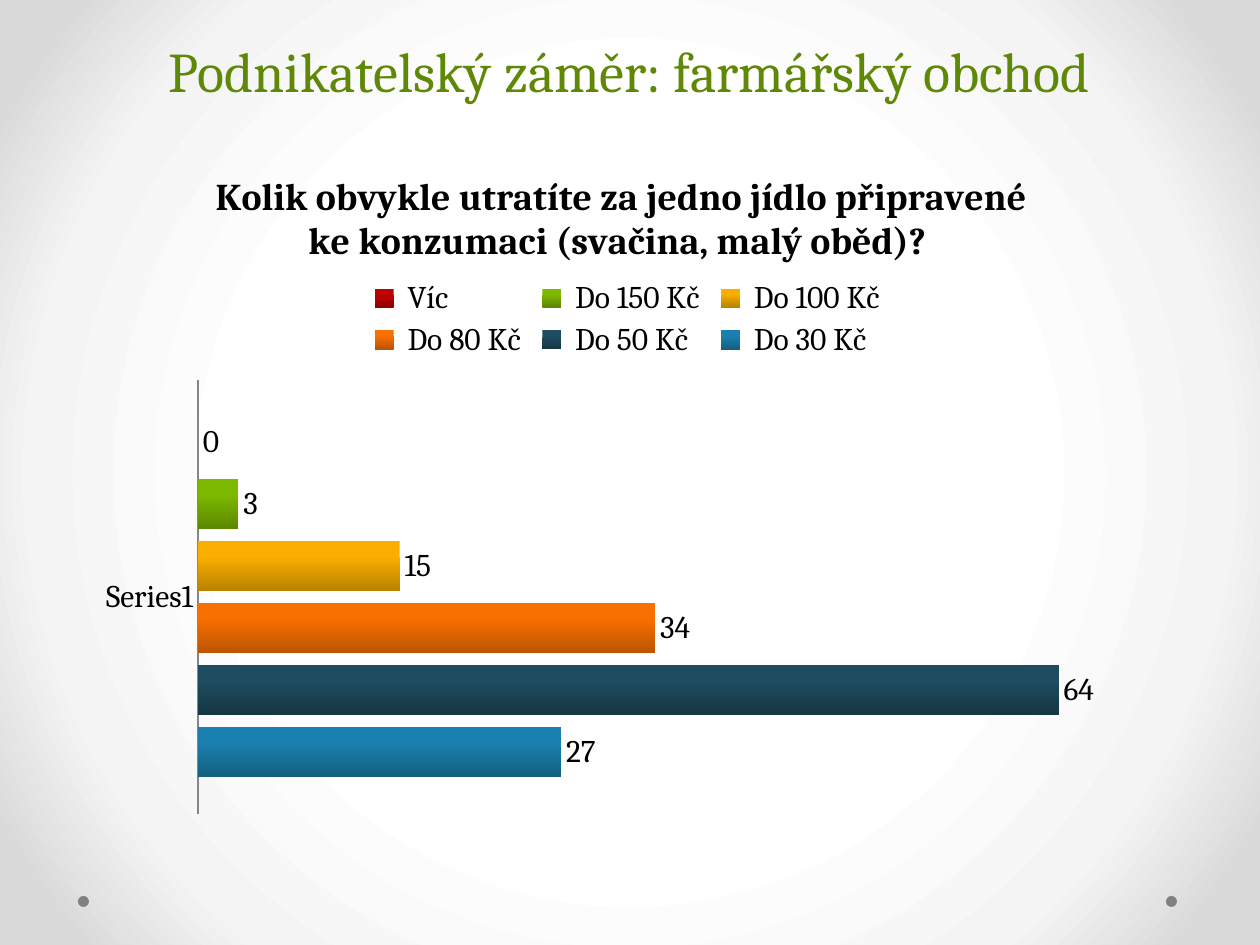
"""Build a slide with a bar chart of spending on one ready-to-eat meal."""
from lxml.etree import SubElement
from pptx import Presentation
from pptx.chart.data import CategoryChartData
from pptx.dml.color import RGBColor
from pptx.enum.chart import XL_CHART_TYPE, XL_LABEL_POSITION, XL_LEGEND_POSITION, XL_TICK_LABEL_POSITION, XL_TICK_MARK
from pptx.enum.shapes import MSO_SHAPE
from pptx.enum.text import MSO_ANCHOR, PP_ALIGN
from pptx.oxml import parse_xml
from pptx.oxml.ns import qn
from pptx.util import Emu, Pt

FONT = "Cambria"
COLORS = {"title": "5E8805", "text": "000000", "dot": "808080", "axis": "868686"}
BACKDROP = {50: "FFFFFF", 76: "F4F4F4", 92: "DADADA"}
BARS = [
    (" Do 30 Kč", 27, "1A80B0", "14607F"),
    (" Do 50 Kč", 64, "1E4C60", "163844"),
    (" Do 80 Kč", 34, "F87000", "BC5400"),
    (" Do 100 Kč", 15, "FAAF00", "BA8200"),
    (" Do 150 Kč", 3, "7CB900", "5C8800"),
    (" Víc", 0, "C00000", "900000"),
]


def px(*lengths):
    return [Emu(round(length * 914400 / 126)) for length in lengths]


def place(part, **shares):
    for old in part.findall(qn("c:layout")):
        part.remove(old)
    layout = parse_xml('<c:layout xmlns:c="http://schemas.openxmlformats.org/drawingml/2006/chart"/>')
    manual = SubElement(layout, qn("c:manualLayout"))
    if part.tag == qn("c:plotArea"):
        SubElement(manual, qn("c:layoutTarget"), val="inner")
    for mode in ("xMode", "yMode"):
        SubElement(manual, qn(f"c:{mode}"), val="edge")
    for side, share in shares.items():
        SubElement(manual, qn(f"c:{side}"), val=str(share))
    position = part.find(qn("c:legendPos"))
    part.insert(0 if position is None else part.index(position) + 1, layout)


deck = Presentation()
deck.slide_width, deck.slide_height = px(1260, 945)
page = deck.slides.add_slide(deck.slide_layouts[6])

page.background.fill.gradient()
gradient = page.element.find(".//" + qn("a:gradFill"))
for child in list(gradient):
    gradient.remove(child)
stops = SubElement(gradient, qn("a:gsLst"))
for percent, color in BACKDROP.items():
    stop = SubElement(stops, qn("a:gs"), pos=str(percent * 1000))
    SubElement(stop, qn("a:srgbClr"), val=color)
circle = SubElement(gradient, qn("a:path"), path="circle")
SubElement(circle, qn("a:fillToRect"), l="50000", t="50000", r="50000", b="50000")

for left in (1166, 78):
    dot = page.shapes.add_shape(MSO_SHAPE.OVAL, *px(left, 896, 11, 11))
    dot.shadow.inherit = False
    dot.fill.solid()
    dot.fill.fore_color.rgb = RGBColor.from_string(COLORS["dot"])
    dot.line.fill.background()

box = page.shapes.add_textbox(*px(63, -111, 1134, 221))
box.text_frame.word_wrap = True
box.text_frame.vertical_anchor = MSO_ANCHOR.BOTTOM
para = box.text_frame.paragraphs[0]
para.text = "Podnikatelský záměr: farmářský obchod"
para.alignment = PP_ALIGN.CENTER
para.line_spacing = Pt(58)
para.font.name, para.font.size = FONT, Pt(32)
para.font.color.rgb = RGBColor.from_string(COLORS["title"])

data = CategoryChartData()
data.categories = ["Series1"]
for name, value, *_ in BARS:
    data.add_series(name, [value])
frame = page.shapes.add_chart(XL_CHART_TYPE.BAR_CLUSTERED, *px(84, 145, 1076, 682), data)
chart = frame.chart
chart.font.name, chart.font.size = FONT, Pt(18)
chart.font.color.rgb = RGBColor.from_string(COLORS["text"])

chart.has_title = True
heading = chart.chart_title.text_frame.paragraphs[0]
heading.text = "Kolik obvykle utratíte za jedno jídlo připravené ke konzumaci (svačina, malý oběd)? "
heading.font.name, heading.font.size, heading.font.bold = FONT, Pt(21.6), True
heading.font.color.rgb = RGBColor.from_string(COLORS["text"])

chart.has_legend = True
chart.legend.position = XL_LEGEND_POSITION.TOP
chart.legend.include_in_layout = False
place(chart.legend._element, x=0.26, y=0.19, w=0.49, h=0.13)
place(chart._chartSpace.find(".//" + qn("c:plotArea")), x=0.106, y=0.345, w=0.875, h=0.636)

chart.value_axis.visible = False
chart.value_axis.has_major_gridlines = False
chart.value_axis.minimum_scale, chart.value_axis.maximum_scale = 0, 70
chart.category_axis.major_tick_mark = XL_TICK_MARK.NONE
chart.category_axis.tick_label_position = XL_TICK_LABEL_POSITION.NEXT_TO_AXIS
chart.category_axis.format.line.color.rgb = RGBColor.from_string(COLORS["axis"])

plot = chart.plots[0]
plot.gap_width, plot.overlap, plot.vary_by_categories = 150, -25, False
for series, (_, _, light, dark) in zip(plot.series, BARS):
    fill = series.format.fill
    fill.gradient()
    fill.gradient_angle = 270
    for stop, color, position in zip(fill.gradient_stops, (light, dark), (0.3, 1)):
        stop.color.rgb = RGBColor.from_string(color)
        stop.position = position
    series.data_labels.show_value = True
    series.data_labels.position = XL_LABEL_POSITION.OUTSIDE_END

deck.save("out.pptx")
